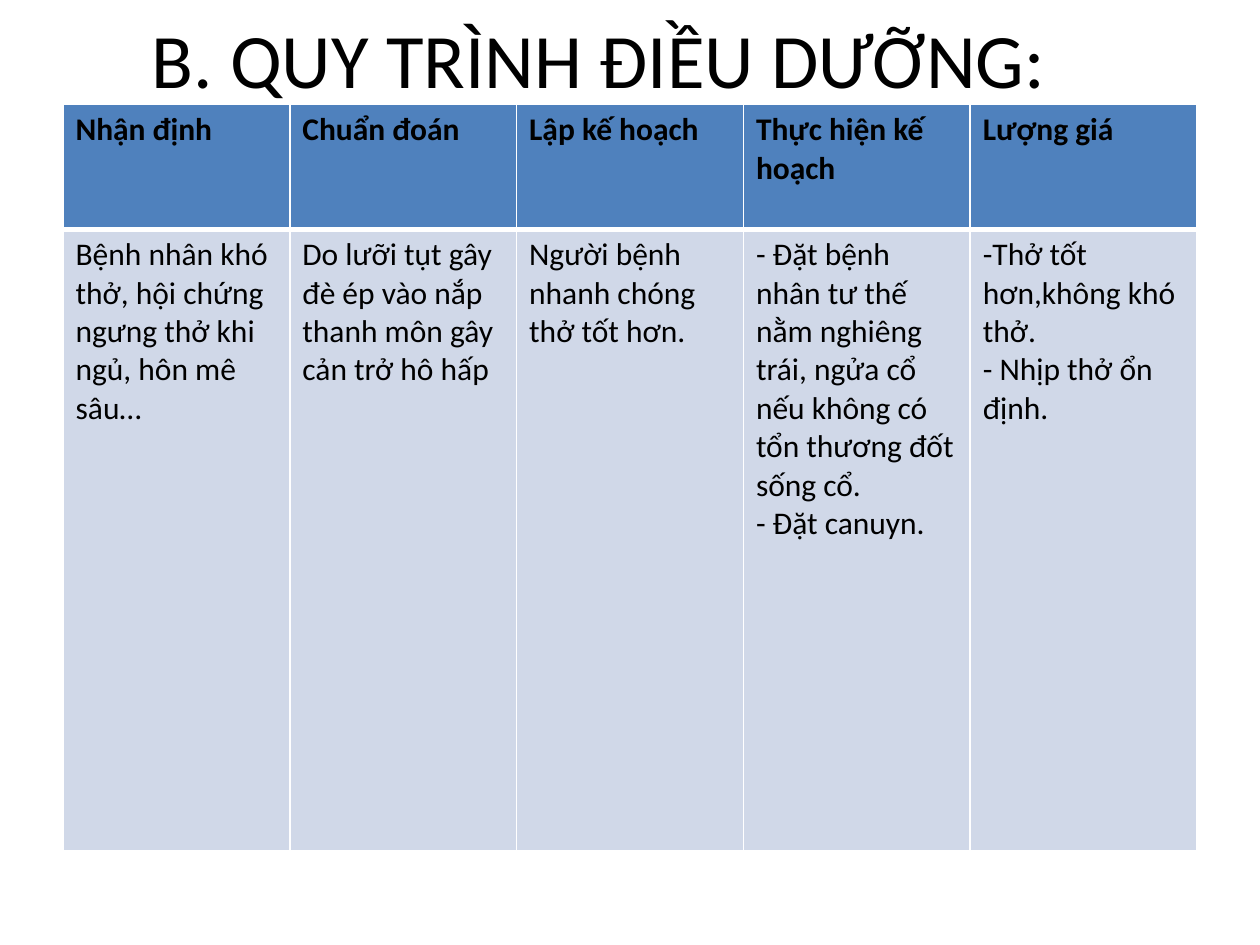
from lxml.etree import SubElement
from pptx import Presentation
from pptx.dml.color import RGBColor
from pptx.enum.text import MSO_ANCHOR, PP_ALIGN
from pptx.oxml.ns import qn
from pptx.util import Inches, Pt

COLUMNS = [
    ("Nhận định", ["Bệnh nhân khó thở, hội chứng ngưng thở khi ngủ, hôn mê sâu…"]),
    ("Chuẩn đoán", ["Do lưỡi tụt gây đè ép vào nắp thanh môn gây cản trở hô hấp"]),
    ("Lập kế hoạch", ["Người bệnh nhanh chóng thở tốt hơn."]),
    ("Thực hiện kế hoạch", [
        "- Đặt bệnh nhân tư thế nằm nghiêng trái, ngửa cổ nếu không có tổn thương đốt sống cổ.",
        "- Đặt canuyn.",
    ]),
    ("Lượng giá", ["-Thở tốt hơn,không khó thở.", "- Nhịp thở ổn định."]),
]


def color(value):
    """Turn a hex string into a colour."""
    return RGBColor.from_string(value)


def write(frame, lines, size=18, bold=False, align=PP_ALIGN.LEFT):
    """Write one paragraph per line in a text frame."""
    for index, line in enumerate(lines):
        para = frame.add_paragraph() if index else frame.paragraphs[0]
        para.alignment = align
        span = para.add_run()
        span.text = line
        span.font.name = "Calibri"
        span.font.size = Pt(size)
        span.font.bold = bold
        span.font.color.rgb = color("000000")


def add_borders(cell, top=1, bottom=1):
    """Draw white borders around a cell, with widths in points."""
    props = cell._tc.get_or_add_tcPr()
    for side, width in (("L", 1), ("R", 1), ("T", top), ("B", bottom)):
        line = SubElement(props, qn(f"a:ln{side}"), w=str(Pt(width)))
        fill = SubElement(line, qn("a:solidFill"))
        SubElement(fill, qn("a:srgbClr"), val="FFFFFF")


def fill_cell(cell, lines, fill, bold=False, **borders):
    """Give a cell its borders, fill and text."""
    add_borders(cell, **borders)
    cell.fill.solid()
    cell.fill.fore_color.rgb = color(fill)
    write(cell.text_frame, lines, bold=bold)


def add_title(page, text):
    """Place and format the title placeholder."""
    box = page.shapes.title
    box.left, box.top = Inches(0.92), Inches(0)
    box.width, box.height = Inches(7.67), Inches(0.92)
    box.text_frame.vertical_anchor = MSO_ANCHOR.MIDDLE
    write(box.text_frame, [text], size=44, align=PP_ALIGN.CENTER)


def add_care_table(page):
    """Add the nursing process table, one column per step."""
    height = Inches(6.19)
    frame = page.shapes.add_table(
        2, len(COLUMNS), Inches(0.5), Inches(0.83), Inches(9), height)
    table = frame.table
    for row, row_height in zip(table.rows, (0.99, 4.93)):
        row.height = Inches(row_height)
    frame.height = height
    for index, (heading, lines) in enumerate(COLUMNS):
        fill_cell(table.cell(0, index), [heading], "4F81BD", bold=True, bottom=3)
        fill_cell(table.cell(1, index), lines, "D0D8E8", top=3)


def main():
    """Build the slide and save the deck."""
    deck = Presentation()
    deck.slide_width, deck.slide_height = Inches(10), Inches(7.5)
    page = deck.slides.add_slide(deck.slide_layouts[5])
    add_title(page, "B. QUY TRÌNH ĐIỀU DƯỠNG:")
    add_care_table(page)
    deck.save("out.pptx")


if __name__ == "__main__":
    main()
